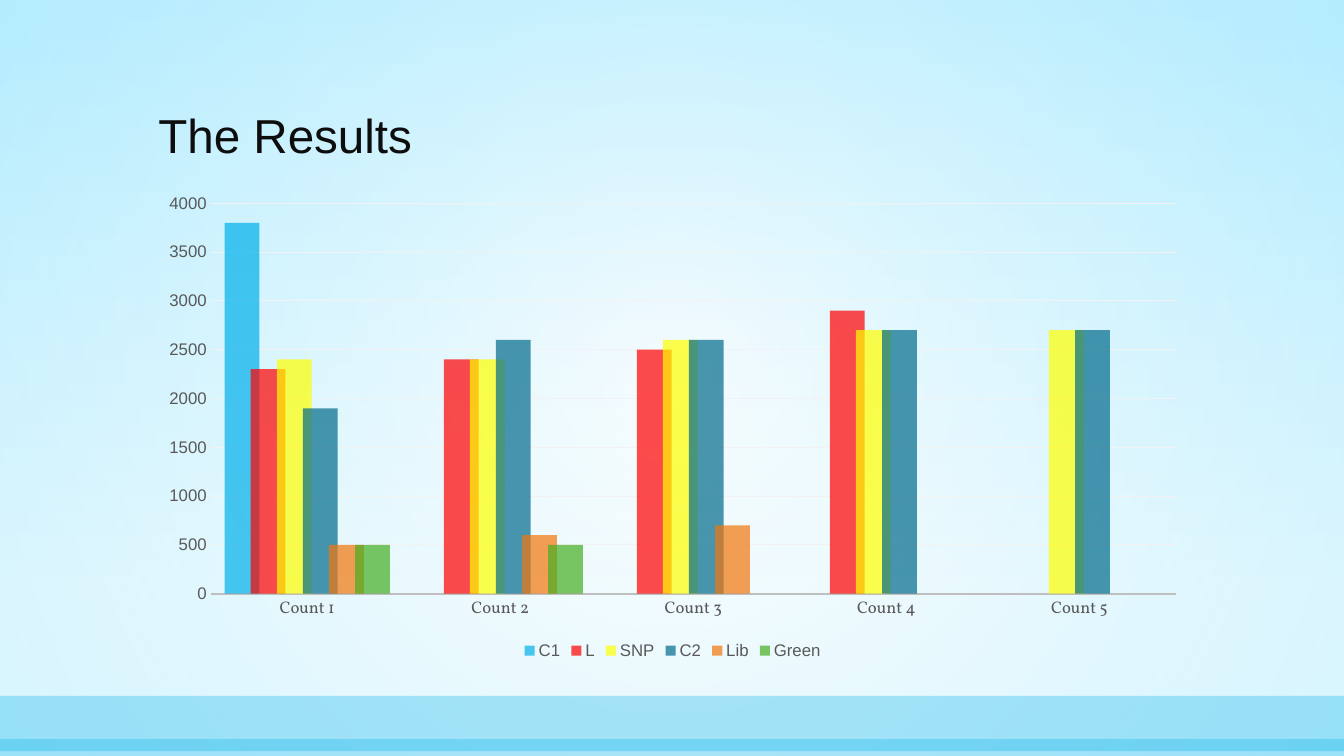
from lxml.etree import SubElement
from pptx import Presentation
from pptx.chart.data import CategoryChartData
from pptx.dml.color import RGBColor
from pptx.enum.chart import XL_CHART_TYPE, XL_LEGEND_POSITION, XL_TICK_MARK
from pptx.enum.shapes import MSO_SHAPE
from pptx.enum.text import MSO_ANCHOR, MSO_AUTO_SIZE, PP_ALIGN
from pptx.oxml import parse_xml
from pptx.oxml.ns import nsdecls, qn
from pptx.util import Pt

SLIDE_WIDTH, SLIDE_HEIGHT = 960, 540
COLORS = {
    "sky": "C8F1FF", "white": "FFFFFF", "edge": "91E4FF", "cyan": "00B0EA",
    "title": "0D0D0D", "label": "595959", "axis": "BFBFBF", "grid": "F2F2F2",
    "red": "FF0000", "yellow": "FFFF00", "teal": "006A8C",
    "orange": "F2760D", "green": "45AE22", "black": "000000",
}
CATEGORIES = [f"Count {number}" for number in range(1, 6)]
SERIES = [
    ("C1", "cyan", (3800, None, None, None, None)),
    ("L", "red", (2300, 2400, 2500, 2900, None)),
    ("SNP", "yellow", (2400, 2400, 2600, 2700, 2700)),
    ("C2", "teal", (1900, 2600, 2600, 2700, 2700)),
    ("Lib", "orange", (500, 600, 700, None, None)),
    ("Green", "green", (500, 500, None, None, None)),
]
LINEAR_DOWN = '<a:lin ang="5400000" scaled="0"/>'
CIRCLE = ('<a:path path="circle"><a:fillToRect l="50000" t="50000" '
          'r="50000" b="50000"/></a:path>')


def color(name):
    return RGBColor.from_string(COLORS[name])


def set_attributes(target, values):
    for name, value in values.items():
        setattr(target, name, value)


def set_font(font, size, color_name, typeface):
    set_attributes(font, {"size": Pt(size), "name": typeface, "bold": False})
    font.color.rgb = color(color_name)


def fill_solid(fill, properties, color_name, opacity):
    fill.solid()
    fill.fore_color.rgb = color(color_name)
    tint = properties.find(f"{qn('a:solidFill')}/{qn('a:srgbClr')}")
    SubElement(tint, qn("a:alpha"), val=str(opacity * 1000))


def fill_gradient(fill, properties, stops, direction):
    """Fill with stops of (position, color name, opacity), all in percent."""
    fill.solid()
    stop_xml = "".join(
        f'<a:gs pos="{position * 1000}"><a:srgbClr val="{COLORS[name]}">'
        f'<a:alpha val="{opacity * 1000}"/></a:srgbClr></a:gs>'
        for position, name, opacity in stops)
    gradient = parse_xml(f'<a:gradFill {nsdecls("a")} rotWithShape="1">'
                         f'<a:gsLst>{stop_xml}</a:gsLst>{direction}</a:gradFill>')
    properties.replace(properties.find(qn("a:solidFill")), gradient)


def add_band(slide, top, height):
    band = slide.shapes.add_shape(
        MSO_SHAPE.RECTANGLE, 0, Pt(top), Pt(SLIDE_WIDTH), Pt(height))
    band.shadow.inherit = False
    band.line.fill.background()
    return band


def add_backdrop(slide):
    fill = slide.background.fill
    fill.solid()
    fill_gradient(fill, slide.element.find(f".//{qn('p:bgPr')}"),
                  [(0, "sky", 56), (79, "white", 100)], LINEAR_DOWN)
    glow = add_band(slide, 0, SLIDE_HEIGHT)
    fill_gradient(glow.fill, glow.element.spPr,
                  [(0, "white", 49), (100, "edge", 35)], CIRCLE)
    for top, height, opacity in [(497, 39.5, 30), (528, 12, 28)]:
        band = add_band(slide, top, height)
        fill_solid(band.fill, band.element.spPr, "cyan", opacity)


def format_title(slide, text):
    title = slide.shapes.title
    set_attributes(title, {"left": Pt(106), "top": Pt(34.5),
                           "width": Pt(749), "height": Pt(86)})
    frame = title.text_frame
    frame.text = text
    set_attributes(frame, {"word_wrap": True, "auto_size": MSO_AUTO_SIZE.NONE,
                           "vertical_anchor": MSO_ANCHOR.BOTTOM})
    paragraph = frame.paragraphs[0]
    set_attributes(paragraph, {"alignment": PP_ALIGN.LEFT, "line_spacing": 0.9})
    set_font(paragraph.runs[0].font, 34, "title", "Arial")
    # Bring the title in front of the backdrop
    slide.shapes.element.append(title.element)


def format_axis(axis, typeface):
    set_attributes(axis, {"major_tick_mark": XL_TICK_MARK.NONE,
                          "minor_tick_mark": XL_TICK_MARK.NONE})
    set_font(axis.tick_labels.font, 12, "label", typeface)


def format_line(line, color_name, width):
    line.color.rgb = color(color_name)
    line.width = Pt(width)


def add_results_chart(slide):
    data = CategoryChartData()
    data.categories = CATEGORIES
    for name, _, values in SERIES:
        data.add_series(name, values)
    chart = slide.shapes.add_chart(
        XL_CHART_TYPE.COLUMN_CLUSTERED, Pt(106), Pt(132), Pt(749), Pt(342), data).chart
    set_attributes(chart, {"has_title": False, "has_legend": True})
    set_font(chart.font, 10, "black", "Vollkorn")

    # Columns
    plot = chart.plots[0]
    set_attributes(plot, {"gap_width": 80, "overlap": 25, "vary_by_categories": False})
    for series, (_, color_name, _) in zip(plot.series, SERIES):
        series.invert_if_negative = False
        fill = series.format.fill
        fill.solid()
        fill_solid(fill, series._element.find(qn("c:spPr")), color_name, 70)

    # Axes
    format_axis(chart.category_axis, "Vollkorn")
    format_line(chart.category_axis.format.line, "axis", 1.25)
    value_axis = chart.value_axis
    format_axis(value_axis, "Arial")
    set_attributes(value_axis, {"minimum_scale": 0, "maximum_scale": 4000,
                                "major_unit": 500, "has_major_gridlines": True})
    value_axis.format.line.fill.background()
    format_line(value_axis.major_gridlines.format.line, "grid", 0.75)

    # Legend
    set_attributes(chart.legend, {"position": XL_LEGEND_POSITION.BOTTOM,
                                  "include_in_layout": False})
    set_font(chart.legend.font, 12, "label", "Arial")


def main():
    presentation = Presentation()
    set_attributes(presentation, {"slide_width": Pt(SLIDE_WIDTH),
                                  "slide_height": Pt(SLIDE_HEIGHT)})
    slide = presentation.slides.add_slide(presentation.slide_layouts[5])
    add_backdrop(slide)
    format_title(slide, "The Results")
    add_results_chart(slide)
    presentation.save("out.pptx")


if __name__ == "__main__":
    main()
